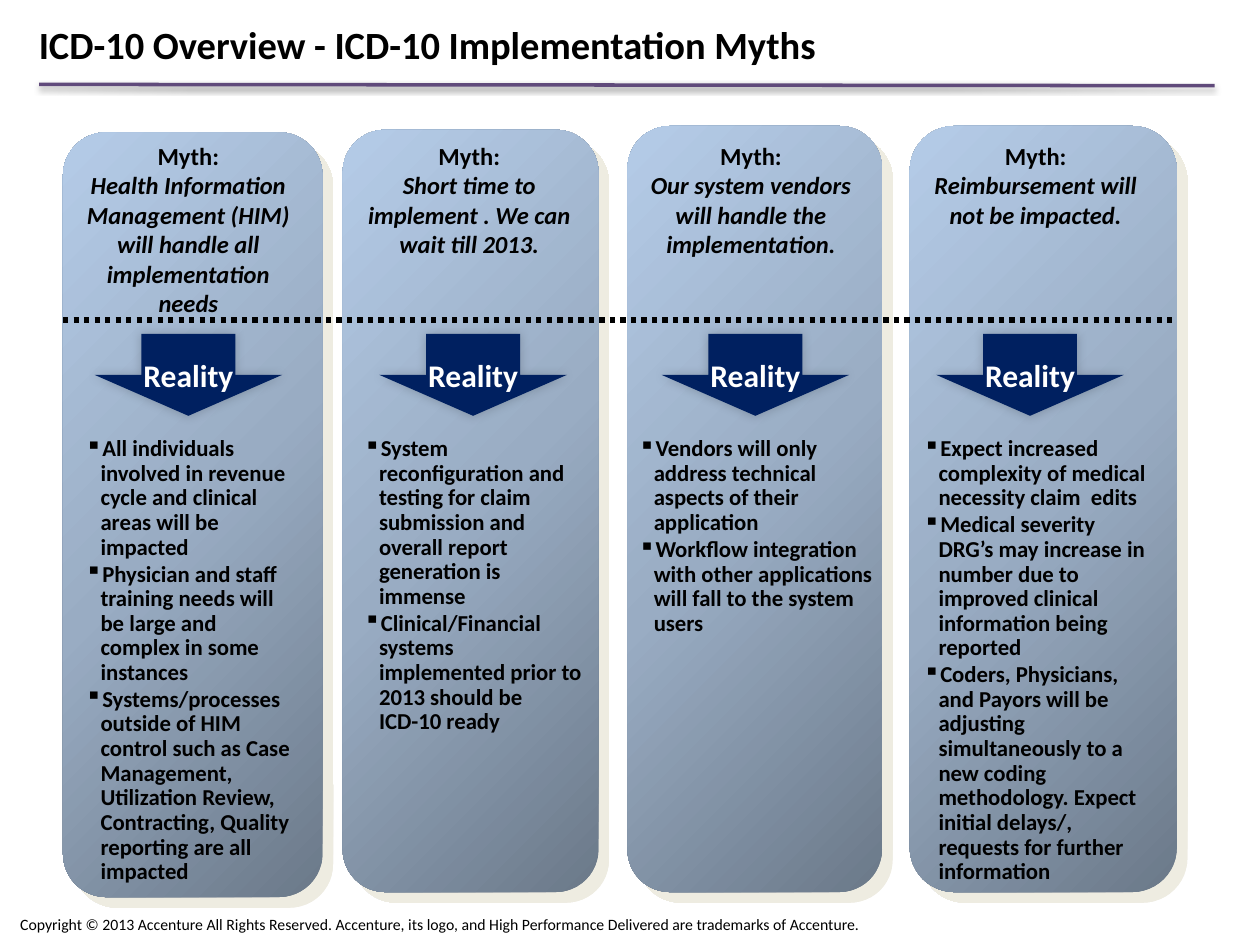
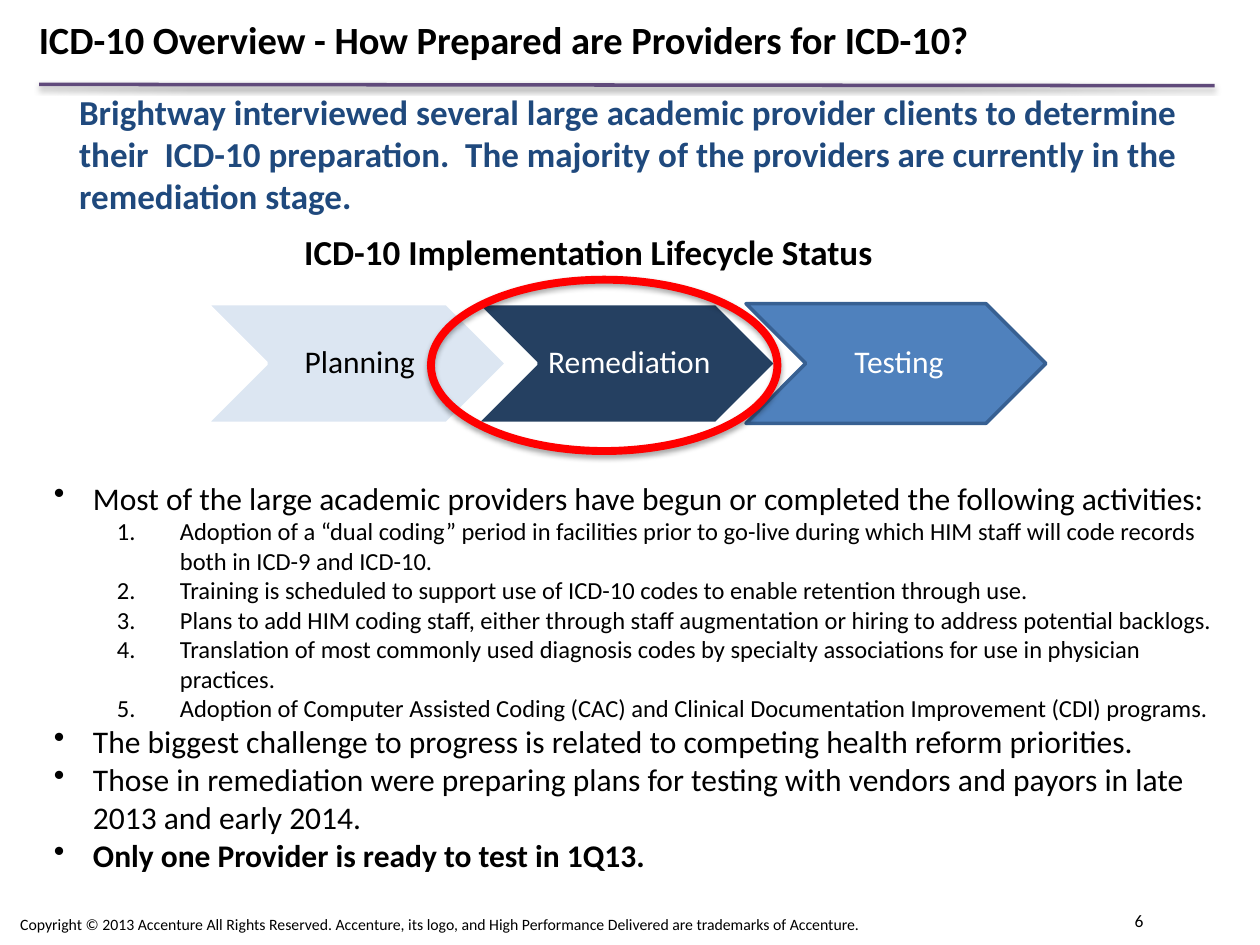
from dataclasses import dataclass
from typing import NamedTuple, Optional

from lxml import etree
from pptx import Presentation
from pptx import util as u
from pptx.dml.color import RGBColor
from pptx.enum import dml, shapes, text
from pptx.oxml import parse_xml
from pptx.oxml.ns import nsdecls, qn

EMU_PER_PX = 9144


class Rect(NamedTuple):
    left: int
    top: int
    width: int
    height: int


class Shadow(NamedTuple):
    color: str
    alpha: int
    blur: float
    distance: float
    angle: int


class Bullet(NamedTuple):
    tag: str
    attribute: str
    value: str
    margin: int
    hang: int


@dataclass(frozen=True)
class Theme:
    font: str = "Calibri"
    black: str = "000000"
    white: str = "FFFFFF"
    rule: str = "604A7B"
    navy: str = "002060"
    lead: str = "1F497D"
    ring: str = "FF0000"
    panel_stops: tuple = ((0, "6B7989"), (50, "99ACC3"), (100, "B5CCE8"))
    title_size: int = 22
    lead_size: int = 20
    body_size: int = 18
    myth_size: int = 14
    reality_size: int = 13
    page_size: int = 10
    footer_size: int = 9
    rule_shadow: Shadow = Shadow("000000", 38, 3.1, 1.6, 90)
    panel_shadow: Shadow = Shadow("EEECE1", 100, 0, 8.5, 45)
    arrow_shadow: Shadow = Shadow("000000", 20, 6, 0, 225)
    ring_shadow: Shadow = Shadow("000000", 35, 3.1, 1.8, 90)


THEME = Theme()
SQUARE = Bullet("a:buChar", "char", "▪", 12, 12)
ROUND = Bullet("a:buChar", "char", "•", 31, 31)
NUMBER = Bullet("a:buAutoNum", "type", "arabicPeriod", 100, 50)
COPYRIGHT = (
    "Copyright © 2013 Accenture All Rights Reserved. Accenture, its logo, and "
    "High Performance Delivered are trademarks of Accenture."
)


@dataclass(frozen=True)
class Line:
    words: str
    size: int
    color: str = THEME.black
    bold: bool = False
    italic: bool = False
    centered: bool = False
    bullet: Optional[Bullet] = None
    spacing: Optional[float] = None
    before: float = 0


@dataclass(frozen=True)
class MythColumn:
    panel: Rect
    myth: str
    myth_left: int
    myth_width: int
    arrow_left: int
    facts: tuple
    facts_left: int
    facts_width: int


class Stage(NamedTuple):
    name: str
    fill: str
    outline: str
    color: str


COLUMNS = (
    MythColumn(
        Rect(50, 105, 206, 607),
        "Health Information Management (HIM) will handle all implementation needs",
        50, 199, 75,
        (
            "All individuals involved in revenue cycle and clinical areas will be impacted",
            "Physician and staff training needs will be large and complex in some instances",
            "Systems/processes outside of HIM control such as Case Management, "
            "Utilization Review, Contracting, Quality reporting are all impacted",
        ),
        58, 190,
    ),
    MythColumn(
        Rect(272, 103, 203, 605),
        "Short time to implement . We can wait till 2013.",
        276, 193, 301,
        (
            "System reconfiguration and testing for claim submission and overall "
            "report generation is immense",
            "Clinical/Financial systems implemented prior to 2013 should be ICD-10 ready",
        ),
        279, 193,
    ),
    MythColumn(
        Rect(498, 100, 202, 608),
        "Our system vendors will handle the implementation.",
        492, 208, 525,
        (
            "Vendors will only address technical aspects of their application",
            "Workflow integration with other applications will fall to the system users",
        ),
        497, 211,
    ),
    MythColumn(
        Rect(722, 100, 212, 608),
        "Reimbursement will not be impacted.",
        728, 188, 743,
        (
            "Expect increased complexity of medical necessity claim  edits",
            "Medical severity DRG’s may increase in number due to improved clinical "
            "information being reported",
            "Coders, Physicians, and Payors will be adjusting simultaneously to a new "
            "coding methodology. Expect initial delays/, requests for further information",
        ),
        723, 202,
    ),
)

STAGES = (
    Stage("Planning", "DCE6F2", THEME.white, THEME.black),
    Stage("Remediation", "254061", THEME.white, THEME.white),
    Stage("Testing", "4F81BD", "376092", THEME.white),
)

ACTIVITIES = (
    "Adoption of a “dual coding” period in facilities prior to go-live during which "
    "HIM staff will code records both in ICD-9 and ICD-10.",
    "Training is scheduled to support use of ICD-10 codes to enable retention through use.",
    "Plans to add HIM coding staff, either through staff augmentation or hiring to "
    "address potential backlogs.",
    "Translation of most commonly used diagnosis codes by specialty associations for "
    "use in physician practices.",
    "Adoption of Computer Assisted Coding (CAC) and Clinical Documentation "
    "Improvement (CDI) programs.",
)


def px(length: int) -> int:
    return length * EMU_PER_PX


def place(rect: Rect) -> list[int]:
    return [px(length) for length in rect]


def set_effect(shape, shadow: Optional[Shadow] = None) -> None:
    effects = etree.SubElement(shape._element.spPr, qn("a:effectLst"))
    if shadow:
        effects.append(parse_xml(
            f'<a:outerShdw {nsdecls("a")} blurRad="{u.Pt(shadow.blur)}" '
            f'dist="{u.Pt(shadow.distance)}" dir="{shadow.angle * 60000}" rotWithShape="0">'
            f'<a:srgbClr val="{shadow.color}"><a:alpha val="{shadow.alpha * 1000}"/>'
            f'</a:srgbClr></a:outerShdw>'
        ))


def set_line(shape, color: str, width: float) -> None:
    shape.line.color.rgb = RGBColor.from_string(color)
    shape.line.width = u.Pt(width)


def write(frame, lines: list[Line], anchor=text.MSO_ANCHOR.TOP, wrap: bool = True,
          insets: tuple = (10, 5, 10, 5)) -> None:
    frame.word_wrap = wrap
    frame.vertical_anchor = anchor
    (frame.margin_left, frame.margin_top,
     frame.margin_right, frame.margin_bottom) = map(px, insets)
    for index, line in enumerate(lines):
        para = frame.paragraphs[0] if index == 0 else frame.add_paragraph()
        para.add_run().text = line.words
        para.alignment = text.PP_ALIGN.CENTER if line.centered else text.PP_ALIGN.LEFT
        if line.bullet:
            properties = para._p.get_or_add_pPr()
            properties.set("marL", str(px(line.bullet.margin)))
            properties.set("indent", str(-px(line.bullet.hang)))
            mark = etree.SubElement(properties, qn(line.bullet.tag))
            mark.set(line.bullet.attribute, line.bullet.value)
        if line.spacing:
            para.line_spacing = line.spacing
        if index and line.before:
            para.space_before = u.Pt(line.before)
        para.font.name = THEME.font
        para.font.size = u.Pt(line.size)
        para.font.bold = line.bold
        para.font.italic = line.italic
        para.font.color.rgb = RGBColor.from_string(line.color)


def add_text(page, rect: Rect, *lines: Line, **layout) -> None:
    write(page.shapes.add_textbox(*place(rect)).text_frame, list(lines), **layout)


def add_preset(page, kind, rect: Rect, fill: Optional[str] = None,
               outline: Optional[str] = None, width: float = 2,
               shadow: Optional[Shadow] = None):
    shape = page.shapes.add_shape(kind, *place(rect))
    if fill:
        shape.fill.solid()
        shape.fill.fore_color.rgb = RGBColor.from_string(fill)
    else:
        shape.fill.background()
    if outline:
        set_line(shape, outline, width)
    else:
        shape.line.fill.background()
    set_effect(shape, shadow)
    return shape


def add_rule(page, start: tuple, end: tuple, color: str, width: float,
             shadow: Optional[Shadow] = None):
    rule = page.shapes.add_connector(
        shapes.MSO_CONNECTOR.STRAIGHT, *map(px, start + end))
    set_line(rule, color, width)
    set_effect(rule, shadow)
    return rule


def add_panel(page, rect: Rect) -> None:
    panel = add_preset(page, shapes.MSO_SHAPE.ROUNDED_RECTANGLE, rect,
                       shadow=THEME.panel_shadow)
    stops = "".join(
        f'<a:gs pos="{position * 1000}"><a:srgbClr val="{color}"/></a:gs>'
        for position, color in THEME.panel_stops
    )
    properties = panel._element.spPr
    properties.replace(properties.find(qn("a:noFill")), parse_xml(
        f'<a:gradFill {nsdecls("a")} rotWithShape="1"><a:gsLst>{stops}</a:gsLst>'
        f'<a:lin ang="{225 * 60000}" scaled="0"/></a:gradFill>'
    ))


def add_page(deck, title: str, rect: Rect, anchor):
    page = deck.slides.add_slide(deck.slide_layouts[6])
    add_rule(page, (31, 67), (964, 68), THEME.rule, 2, THEME.rule_shadow)
    add_text(page, Rect(16, 718, 915, 23), Line(COPYRIGHT, THEME.footer_size),
             anchor=text.MSO_ANCHOR.BOTTOM, insets=(0, 0, 0, 0))
    add_text(page, rect, Line(title, THEME.title_size, bold=True), anchor=anchor)
    return page


def add_column(page, column: MythColumn) -> None:
    add_panel(page, column.panel)
    add_text(page, Rect(column.myth_left, 107, column.myth_width, 151),
             Line("Myth:", THEME.myth_size, bold=True, centered=True),
             Line(column.myth, THEME.myth_size, bold=True, italic=True, centered=True))
    add_text(page, Rect(column.facts_left, 342, column.facts_width, 160),
             *(Line(fact, THEME.reality_size, bold=True, bullet=SQUARE,
                    spacing=0.9, before=1.3) for fact in column.facts))
    add_preset(page, shapes.MSO_SHAPE.DOWN_ARROW, Rect(column.arrow_left, 265, 149, 65),
               THEME.navy, shadow=THEME.arrow_shadow)
    add_text(page, Rect(column.arrow_left + 29, 278, 92, 40),
             Line("Reality", THEME.body_size, THEME.white, bold=True), wrap=False)


def build_myths(deck) -> None:
    page = add_page(deck, "ICD-10 Overview - ICD-10 Implementation Myths",
                    Rect(21, -17, 767, 75), text.MSO_ANCHOR.BOTTOM)
    for column in COLUMNS:
        add_column(page, column)
    divider = add_rule(page, (50, 254), (930, 254), THEME.black, 3)
    divider.line.dash_style = dml.MSO_LINE.ROUND_DOT


def build_readiness(deck) -> None:
    page = add_page(deck, "ICD-10 Overview - How Prepared are Providers for ICD-10?",
                    Rect(21, 8, 913, 81), text.MSO_ANCHOR.TOP)
    add_text(page, Rect(850, 717, 108, 33), Line("6", THEME.page_size, centered=True))
    for index, stage in enumerate(STAGES):
        chevron = add_preset(page, shapes.MSO_SHAPE.CHEVRON,
                             Rect(164 + 214 * index, 241, 238, 95),
                             stage.fill, stage.outline)
        write(chevron.text_frame,
              [Line(stage.name, THEME.body_size, stage.color, centered=True, spacing=0.9)],
              anchor=text.MSO_ANCHOR.MIDDLE, insets=(8, 3, 3, 3))
    add_text(page, Rect(53, 67, 920, 111), Line(
        "Brightway interviewed several large academic provider clients to determine "
        "their  ICD-10 preparation.  The majority of the providers are currently in "
        "the remediation stage.", THEME.lead_size, THEME.lead, bold=True))
    add_text(
        page, Rect(33, 375, 950, 326),
        Line("Most of the large academic providers have begun or completed the "
             "following activities:", THEME.body_size, bullet=ROUND),
        *(Line(activity, THEME.myth_size, bullet=NUMBER) for activity in ACTIVITIES),
        Line("The biggest challenge to progress is related to competing health reform "
             "priorities.", THEME.body_size, bullet=ROUND),
        Line("Those in remediation were preparing plans for testing with vendors and "
             "payors in late 2013 and early 2014.", THEME.body_size, bullet=ROUND),
        Line("Only one Provider is ready to test in 1Q13.", THEME.body_size,
             bold=True, bullet=ROUND),
    )
    add_text(page, Rect(17, 178, 900, 39), Line(
        "ICD-10 Implementation Lifecycle Status", THEME.lead_size, bold=True, centered=True))
    add_preset(page, shapes.MSO_SHAPE.OVAL, Rect(342, 222, 275, 136),
               outline=THEME.ring, width=4.5, shadow=THEME.ring_shadow)


def main() -> None:
    deck = Presentation()
    deck.slide_width, deck.slide_height = px(1000), px(750)
    build_myths(deck)
    build_readiness(deck)
    deck.save("out.pptx")


if __name__ == "__main__":
    main()
